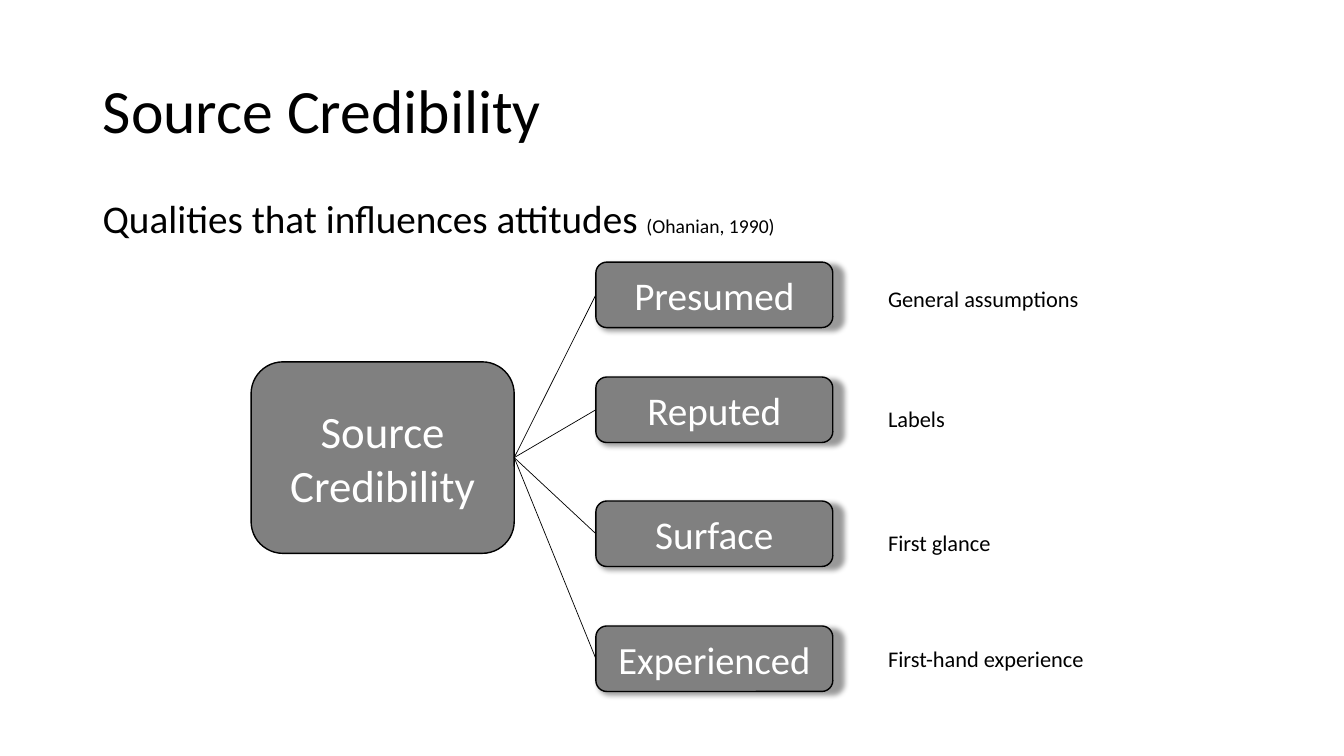
from lxml.etree import SubElement
from pptx import Presentation
from pptx.dml.color import RGBColor
from pptx.enum.shapes import MSO_CONNECTOR as CONN, MSO_SHAPE as SHAPE
from pptx.enum.text import MSO_ANCHOR as ANCHOR, PP_ALIGN as ALIGN
from pptx.oxml.ns import qn
from pptx.util import Inches, Pt

BLACK = RGBColor(0x00, 0x00, 0x00)
WHITE = RGBColor(0xFF, 0xFF, 0xFF)
GRAY = RGBColor(0x80, 0x80, 0x80)
FONT = "Calibri"

QUALITIES = [
    ("Presumed", 28, 0, "General assumptions", 0.18),
    ("Reputed", 28, 1.14, "Labels", 1.37),
    ("Surface", 28, 2.37, "First glance", 2.6),
    ("Experienced", 27.5, 3.61, "First-hand experience", 3.75),
]


def add_run(p, text, size, color=BLACK):
    r = p.add_run()
    r.text = text
    r.font.name = FONT
    r.font.size = Pt(size)
    r.font.color.rgb = color


def write(tf, lines, size, color=BLACK, align=ALIGN.LEFT, anchor=ANCHOR.TOP):
    tf.word_wrap = True
    tf.vertical_anchor = anchor
    for i, line in enumerate(lines):
        p = tf.paragraphs[0] if i == 0 else tf.add_paragraph()
        p.alignment = align
        add_run(p, line, size, color)
    return tf.paragraphs[0]


def add_text(s, box, text, size):
    tb = s.shapes.add_textbox(*map(Inches, box))
    return write(tb.text_frame, [text], size)


def add_shadow(sp):
    effects = sp._element.spPr.find(qn("a:effectLst"))
    shadow = SubElement(effects, qn("a:outerShdw"), blurRad=str(Pt(4)),
                        dist=str(Pt(3)), dir="2700000", sx="103000",
                        algn="tl", rotWithShape="0")
    color = SubElement(shadow, qn("a:srgbClr"), val=str(BLACK))
    SubElement(color, qn("a:alpha"), val="40000")


def add_node(s, box, lines, size):
    sp = s.shapes.add_shape(SHAPE.ROUNDED_RECTANGLE, *map(Inches, box))
    sp.shadow.inherit = False
    sp.fill.solid()
    sp.fill.fore_color.rgb = GRAY
    sp.line.color.rgb = BLACK
    sp.line.width = Pt(1)
    write(sp.text_frame, lines, size, WHITE, ALIGN.CENTER, ANCHOR.MIDDLE)
    return sp


def link(s, child, root):
    line = s.shapes.add_connector(CONN.STRAIGHT, 0, 0, 0, 0)
    line.begin_connect(child, 1)
    line.end_connect(root, 3)
    line.line.color.rgb = BLACK
    line.line.width = Pt(0.5)
    SubElement(line._element.spPr, qn("a:effectLst"))


def add_heading(s, x, y, w):
    title = s.shapes.title
    title.left, title.top, title.width, title.height = map(
        Inches, (x, y, w, 1.45))
    p = write(title.text_frame, ["Source Credibility"], 44,
              anchor=ANCHOR.MIDDLE)
    p.line_spacing = 0.9
    p = add_text(s, (x, y + 1.2, w, 1.1),
                 "Qualities that influences attitudes ", 28)
    add_run(p, "(Ohanian, 1990)", 14)
    p.line_spacing = 1.6
    p.space_before = Pt(10)


def add_quality_tree(s, x, y):
    root = add_node(s, (x, y + 0.99, 2.61, 1.9), ["Source", "Credibility"], 32)
    for name, size, node_dy, note, note_dy in QUALITIES:
        node = add_node(s, (x + 3.42, y + node_dy, 2.35, 0.65), [name], size)
        add_shadow(node)
        link(s, node, root)
        add_text(s, (x + 6.22, y + note_dy, 2.44, 0.37), note, 16)


def main():
    prs = Presentation()
    prs.slide_width, prs.slide_height = Inches(13.33), Inches(7.5)
    s = prs.slides.add_slide(prs.slide_layouts[5])
    add_heading(s, 0.92, 0.4, 11.5)
    add_quality_tree(s, 2.49, 2.6)
    prs.save("out.pptx")


if __name__ == "__main__":
    main()
